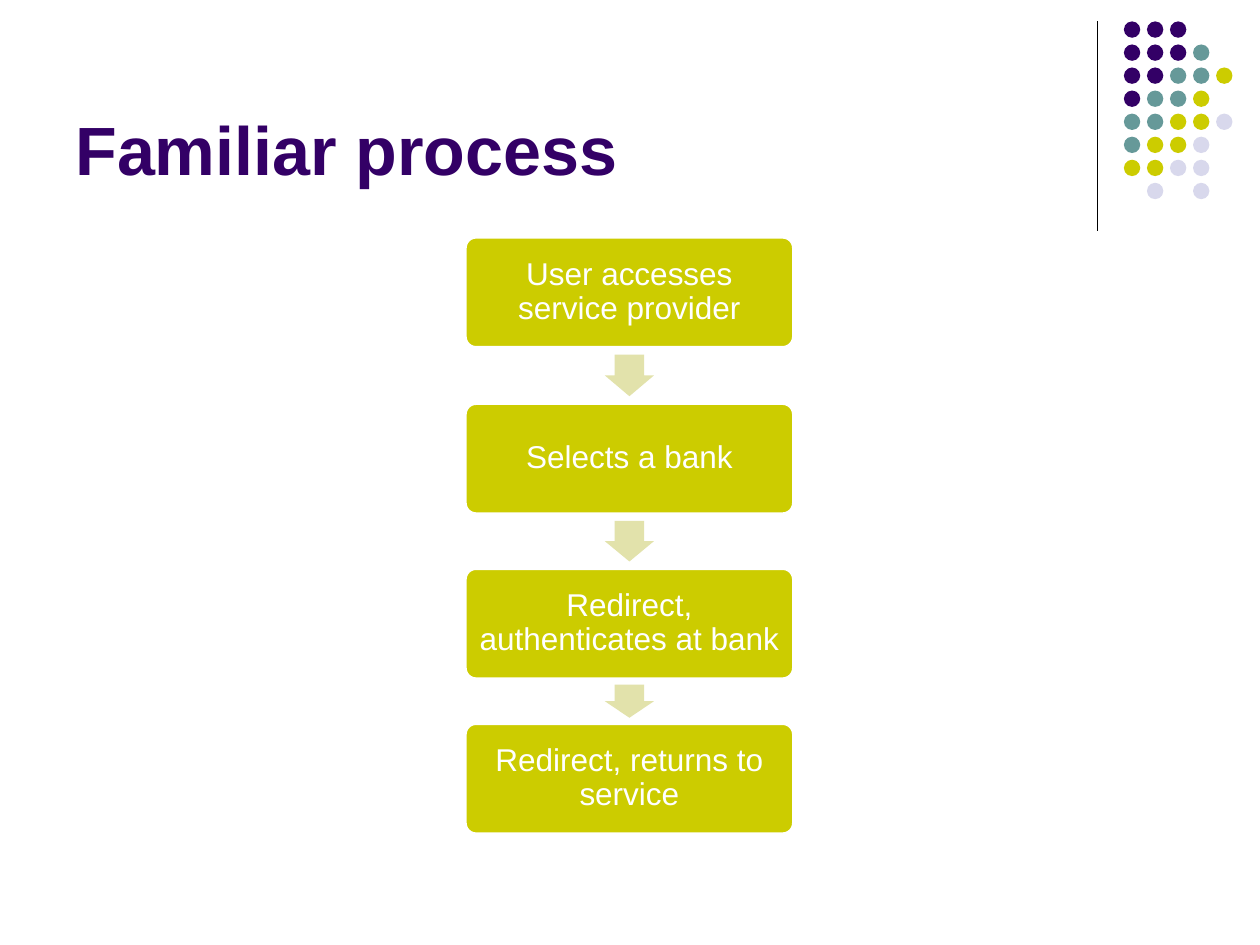
from dataclasses import dataclass

from lxml.etree import SubElement
from pptx import Presentation
from pptx.dml.color import RGBColor
from pptx.enum.shapes import MSO_CONNECTOR, MSO_SHAPE
from pptx.enum.text import MSO_ANCHOR, PP_ALIGN
from pptx.oxml.ns import qn
from pptx.util import Inches, Pt


@dataclass(frozen=True)
class Theme:
    font: str = "Arial"
    title_size: int = 39
    step_size: int = 18
    purple: str = "330066"
    teal: str = "669999"
    lime: str = "CCCC00"
    lavender: str = "D8D8EC"
    arrow: str = "E2E2AB"
    white: str = "FFFFFF"
    black: str = "000000"


THEME = Theme()

# One letter per dot: purple, teal, lime, lavender (v); a space leaves a gap.
DOT_ROWS = ["ppp", "pppt", "ppttl", "pttl", "ttllv", "tllv", "llvv", " v v"]
DOT_COLORS = {"p": THEME.purple, "t": THEME.teal,
              "l": THEME.lime, "v": THEME.lavender}
DOT_LEFT, DOT_TOP, DOT_SIZE, DOT_PITCH = 8.92, 0.17, 0.13, 0.183

STEPS = [
    ("User accesses service provider", 1.88),
    ("Selects a bank", 3.2),
    ("Redirect, authenticates at bank", 4.51),
    ("Redirect, returns to service", 5.74),
]
STEP_LEFT, STEP_WIDTH, STEP_HEIGHT = 3.69, 2.61, 0.88
ARROW_WIDTH, ARROW_SHARE = 0.39, 0.75


def add_filled_shape(page, kind, left, top, width, height, color):
    shape = page.shapes.add_shape(
        kind, Inches(left), Inches(top), Inches(width), Inches(height))
    shape.shadow.inherit = False
    shape.fill.solid()
    shape.fill.fore_color.rgb = RGBColor.from_string(color)
    shape.line.fill.background()
    return shape


def write_text(shape, text, *, size, color, bold=False, align=PP_ALIGN.LEFT,
               anchor=MSO_ANCHOR.MIDDLE, inset=None, line_spacing=None):
    frame = shape.text_frame
    frame.word_wrap = True
    frame.vertical_anchor = anchor
    if inset is not None:
        frame.margin_left = frame.margin_right = Inches(inset)
        frame.margin_top = frame.margin_bottom = Inches(inset)
    para = frame.paragraphs[0]
    para.alignment = align
    para.line_spacing = line_spacing
    span = para.add_run()
    span.text = text
    span.font.name = THEME.font
    span.font.size = Pt(size)
    span.font.bold = bold
    span.font.color.rgb = RGBColor.from_string(color)


def add_divider(page):
    line = page.shapes.add_connector(
        MSO_CONNECTOR.STRAIGHT,
        Inches(8.71), Inches(0.17), Inches(8.71), Inches(1.83))
    line.line.color.rgb = RGBColor.from_string(THEME.black)
    line.line.width = Pt(0.75)
    SubElement(line._element.spPr, qn("a:effectLst"))


def add_dots(page):
    for row, letters in enumerate(DOT_ROWS):
        for column, letter in enumerate(letters):
            if letter in DOT_COLORS:
                add_filled_shape(
                    page, MSO_SHAPE.OVAL,
                    DOT_LEFT + column * DOT_PITCH, DOT_TOP + row * DOT_PITCH,
                    DOT_SIZE, DOT_SIZE, DOT_COLORS[letter])


def add_title(page, text):
    box = page.shapes.add_textbox(
        Inches(0.5), Inches(0.13), Inches(8.25), Inches(1.42))
    write_text(box, text, size=THEME.title_size, color=THEME.purple,
               bold=True, anchor=MSO_ANCHOR.BOTTOM)


def add_step(page, text, top):
    box = add_filled_shape(page, MSO_SHAPE.ROUNDED_RECTANGLE, STEP_LEFT, top,
                           STEP_WIDTH, STEP_HEIGHT, THEME.lime)
    box.adjustments[0] = 0.1
    box.line.color.rgb = RGBColor.from_string(THEME.white)
    box.line.width = Pt(2)
    write_text(box, text, size=THEME.step_size, color=THEME.white,
               align=PP_ALIGN.CENTER, inset=0.05, line_spacing=0.9)


def add_arrow(page, gap_top, gap_bottom):
    """Centre a downward arrow in the gap between two steps."""
    length = ARROW_SHARE * (gap_bottom - gap_top)
    center_x = STEP_LEFT + STEP_WIDTH / 2
    center_y = (gap_top + gap_bottom) / 2
    arrow = add_filled_shape(
        page, MSO_SHAPE.RIGHT_ARROW, center_x - length / 2,
        center_y - ARROW_WIDTH / 2, length, ARROW_WIDTH, THEME.arrow)
    arrow.rotation = 90
    arrow.adjustments[0] = 0.6
    arrow.adjustments[1] = 0.5


def add_process(page):
    previous_bottom = None
    for text, top in STEPS:
        if previous_bottom is not None:
            add_arrow(page, previous_bottom, top)
        add_step(page, text, top)
        previous_bottom = top + STEP_HEIGHT


def main():
    deck = Presentation()
    deck.slide_width, deck.slide_height = Inches(10), Inches(7.5)
    page = deck.slides.add_slide(deck.slide_layouts[6])
    add_divider(page)
    add_dots(page)
    add_title(page, "Familiar process")
    add_process(page)
    deck.save("out.pptx")


if __name__ == "__main__":
    main()
